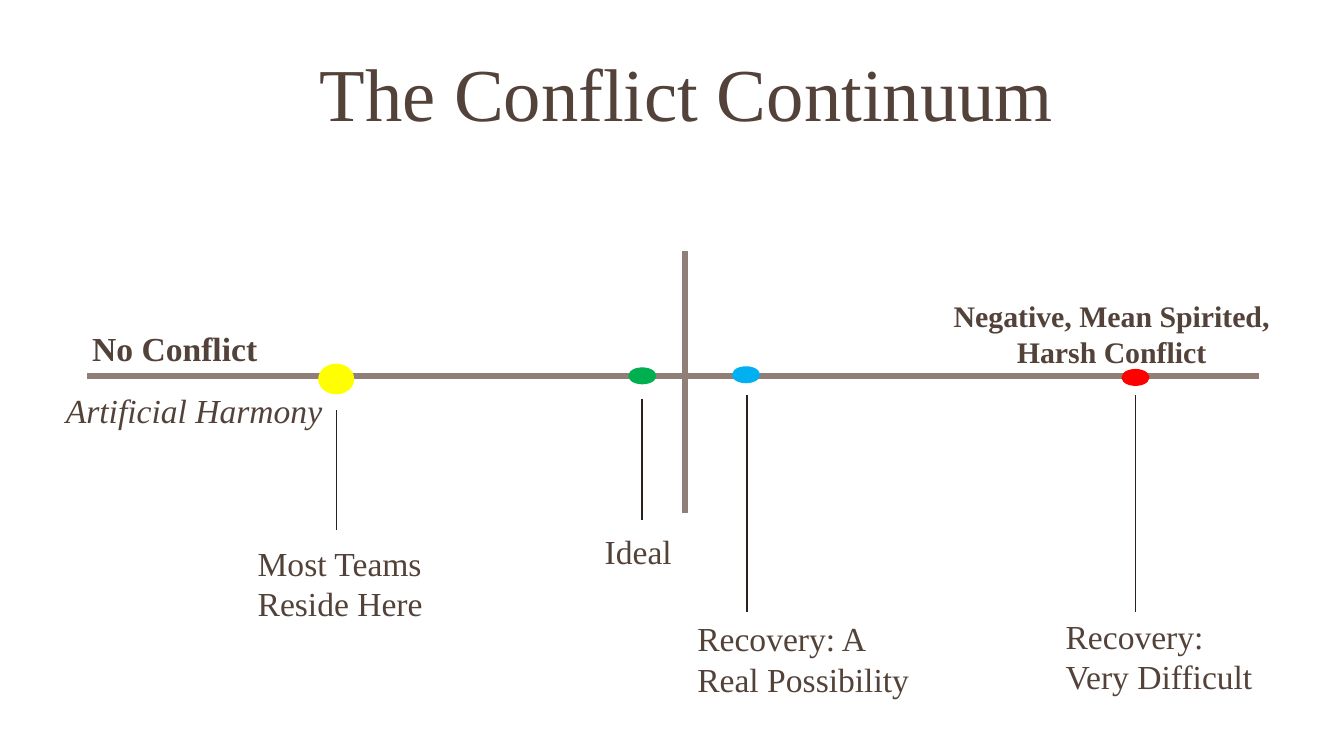
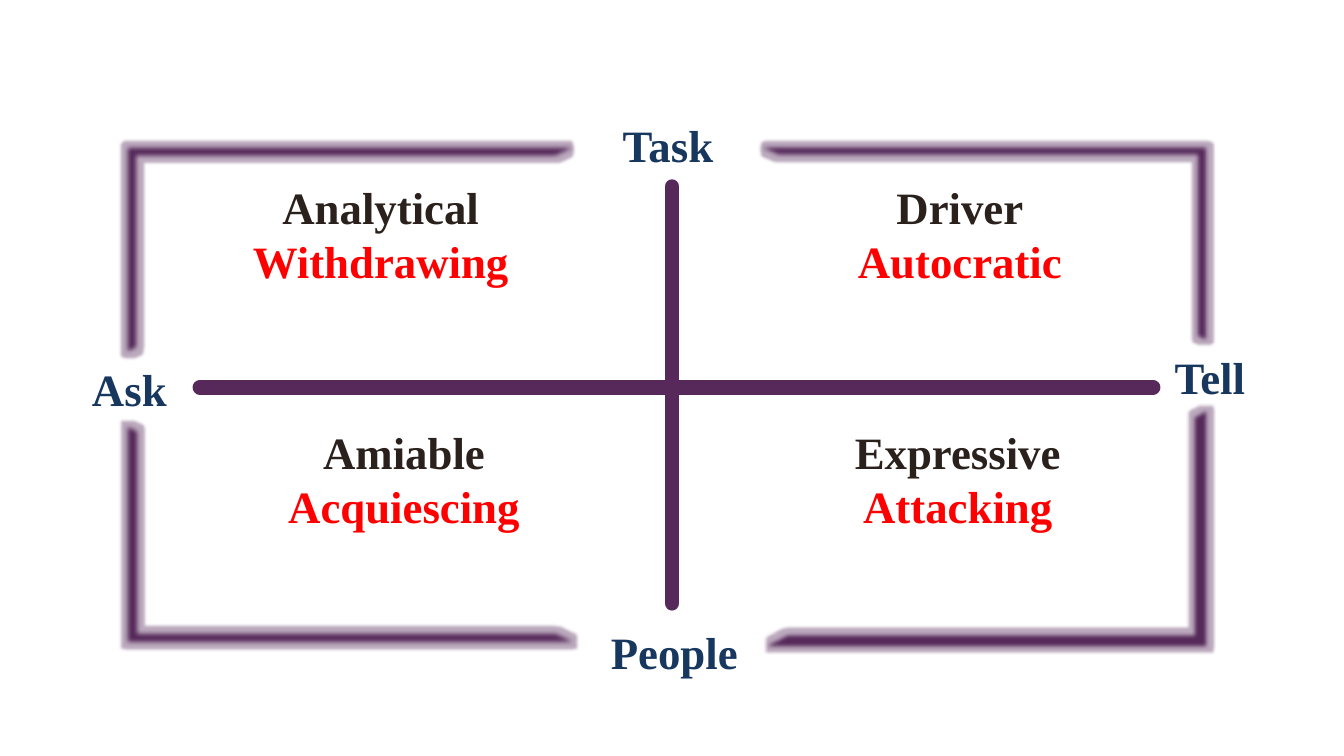
from dataclasses import dataclass

from lxml import etree
from pptx import Presentation
from pptx.dml.color import RGBColor
from pptx.enum.shapes import MSO_CONNECTOR, MSO_SHAPE
from pptx.enum.text import MSO_ANCHOR, MSO_AUTO_SIZE, PP_ALIGN
from pptx.oxml.ns import qn
from pptx.util import Cm, Pt

STRAIGHT = MSO_CONNECTOR.STRAIGHT
ELLIPSE = MSO_SHAPE.OVAL
HALF_FRAME = MSO_SHAPE.HALF_FRAME
TOP = MSO_ANCHOR.TOP
GROW = MSO_AUTO_SIZE.SHAPE_TO_FIT_TEXT
LEFT, CENTER, RIGHT = PP_ALIGN.LEFT, PP_ALIGN.CENTER, PP_ALIGN.RIGHT


@dataclass(frozen=True)
class Theme:
    font: str = "Times New Roman"
    brown: str = "534239"
    taupe: str = "907F76"
    dark: str = "2A211D"
    purple: str = "56295A"
    navy: str = "17375E"
    yellow: str = "FFFF00"
    green: str = "00B050"
    blue: str = "00B0F0"
    red: str = "FF0000"
    title: int = 40
    heading: int = 24
    label: int = 18
    small: int = 16


theme = Theme()


def write_text(page, area, text, size=theme.label, colors=(theme.brown,),
               align=LEFT, bold=False, italic=False, box=None):
    left, top, width, height = [Cm(length) for length in area]
    if box is None:
        box = page.shapes.add_textbox(left, top, width, height)
    else:
        box.left, box.top, box.width, box.height = left, top, width, height
    frame = box.text_frame
    frame.text = text
    frame.word_wrap = True
    frame.auto_size = GROW
    frame.vertical_anchor = TOP
    for index, para in enumerate(frame.paragraphs):
        para.alignment = align
        para.space_before = Pt(0)
        for span in para.runs:
            span.font.name = theme.font
            span.font.size = Pt(size)
            span.font.bold = bold
            span.font.italic = italic
            span.font.color.rgb = RGBColor.from_string(colors[index % len(colors)])


def draw_line(page, start, end, color, weight, round_cap=False):
    line = page.shapes.add_connector(
        STRAIGHT, Cm(start[0]), Cm(start[1]), Cm(end[0]), Cm(end[1]))
    line.line.color.rgb = RGBColor.from_string(color)
    line.line.width = Pt(weight)
    properties = line._element.spPr
    if round_cap:
        properties.find(qn("a:ln")).set("cap", "rnd")
    etree.SubElement(properties, qn("a:effectLst"))


deck = Presentation()
deck.slide_width, deck.slide_height = Cm(25.4), Cm(14.29)

page = deck.slides.add_slide(deck.slide_layouts[5])
write_text(page, (2.49, 0.76, 20.96, 1.96), "The Conflict Continuum",
           size=theme.title, align=CENTER, box=page.shapes.title)
draw_line(page, (1.65, 7.11), (23.8, 7.11), theme.taupe, 3)
draw_line(page, (12.95, 4.75), (12.95, 9.7), theme.taupe, 3)
write_text(page, (0.89, 6.07, 4.83, 1.02), "No Conflict", align=CENTER, bold=True)
write_text(page, (0.61, 7.24, 6.12, 1.02), "Artificial Harmony",
           align=CENTER, italic=True)
write_text(page, (17.35, 5.51, 7.32, 1.63), "Negative, Mean Spirited, Harsh Conflict",
           size=theme.small, align=CENTER, bold=True)

stages = [
    (theme.yellow, (6.05, 6.91, 0.61, 0.51), (6.35, 7.75, 10.01), 0.5,
     "Most Teams Reside Here", (4.62, 10.13, 3.89, 1.8)),
    (theme.green, (11.91, 6.98, 0.46, 0.25), (12.14, 7.54, 9.83), 1,
     "Ideal", (11.18, 9.91, 1.93, 1.02)),
    (theme.blue, (13.87, 6.96, 0.46, 0.25), (14.12, 7.47, 11.56), 1,
     "Recovery: A Real Possibility", (12.93, 11.56, 4.62, 1.8)),
    (theme.red, (21.23, 7.01, 0.46, 0.25), (21.46, 7.47, 11.56), 1,
     "Recovery:\nVery Difficult", (19.89, 11.51, 4.62, 1.8)),
]
for color, dot_area, (x, top, bottom), weight, label, label_area in stages:
    dot = page.shapes.add_shape(ELLIPSE, *[Cm(length) for length in dot_area])
    dot.shadow.inherit = False
    dot.fill.solid()
    dot.fill.fore_color.rgb = RGBColor.from_string(color)
    dot.line.color.rgb = RGBColor.from_string(color)
    dot.line.width = Pt(2)
    draw_line(page, (x, top), (x, bottom), theme.dark, weight)
    write_text(page, label_area, label)

page = deck.slides.add_slide(deck.slide_layouts[6])
draw_line(page, (3.78, 7.32), (21.79, 7.32), theme.purple, 8, round_cap=True)
draw_line(page, (12.7, 3.53), (12.7, 11.4), theme.purple, 8, round_cap=True)

axis_ends = [
    ("Task", (10.72, 2.11, 3.81, 1.27), CENTER),
    ("People", (10.52, 11.68, 4.45, 1.27), CENTER),
    ("Ask", (1.27, 6.71, 2.13, 1.27), RIGHT),
    ("Tell", (20.96, 6.48, 3.81, 1.27), CENTER),
]
for label, area, align in axis_ends:
    write_text(page, area, label, size=theme.heading, colors=(theme.navy,),
               align=align, bold=True)

corners = [
    ((2.34, 2.72, 8.89, 4.06), 0, None),
    ((14.17, 7.62, 8.69, 4.65), 180, None),
    ((13.97, 2.72, 8.89, 3.84), 0, "flipH"),
    ((2.34, 7.92, 8.89, 4.29), 0, "flipV"),
]
for area, rotation, flip in corners:
    corner = page.shapes.add_shape(HALF_FRAME, *[Cm(length) for length in area])
    corner.adjustments[0] = 0.076
    corner.adjustments[1] = 0.08
    corner.rotation = rotation
    corner.shadow.inherit = False
    corner.fill.solid()
    corner.fill.fore_color.rgb = RGBColor.from_string(theme.purple)
    corner.line.fill.background()
    properties = corner._element.spPr
    if flip:
        properties.find(qn("a:xfrm")).set(flip, "1")
    effects = properties.find(qn("a:effectLst"))
    glow = etree.SubElement(effects, qn("a:glow"), rad=str(Pt(3)))
    tint = etree.SubElement(glow, qn("a:srgbClr"), val=theme.purple)
    etree.SubElement(tint, qn("a:alpha"), val="40000")
    etree.SubElement(effects, qn("a:softEdge"), rad=str(Pt(2.5)))

styles = [
    ("Driver", "Autocratic", (15.32, 3.28, 5.64, 2.31)),
    ("Analytical", "Withdrawing", (4.45, 3.28, 5.49, 2.31)),
    ("Expressive", "Attacking", (15.24, 7.9, 5.72, 2.31)),
    ("Amiable", "Acquiescing", (4.88, 7.9, 5.51, 2.31)),
]
for style, reaction, area in styles:
    write_text(page, area, f"{style}\n{reaction}", size=theme.heading,
               colors=(theme.dark, theme.red), align=CENTER, bold=True)

deck.save("out.pptx")
